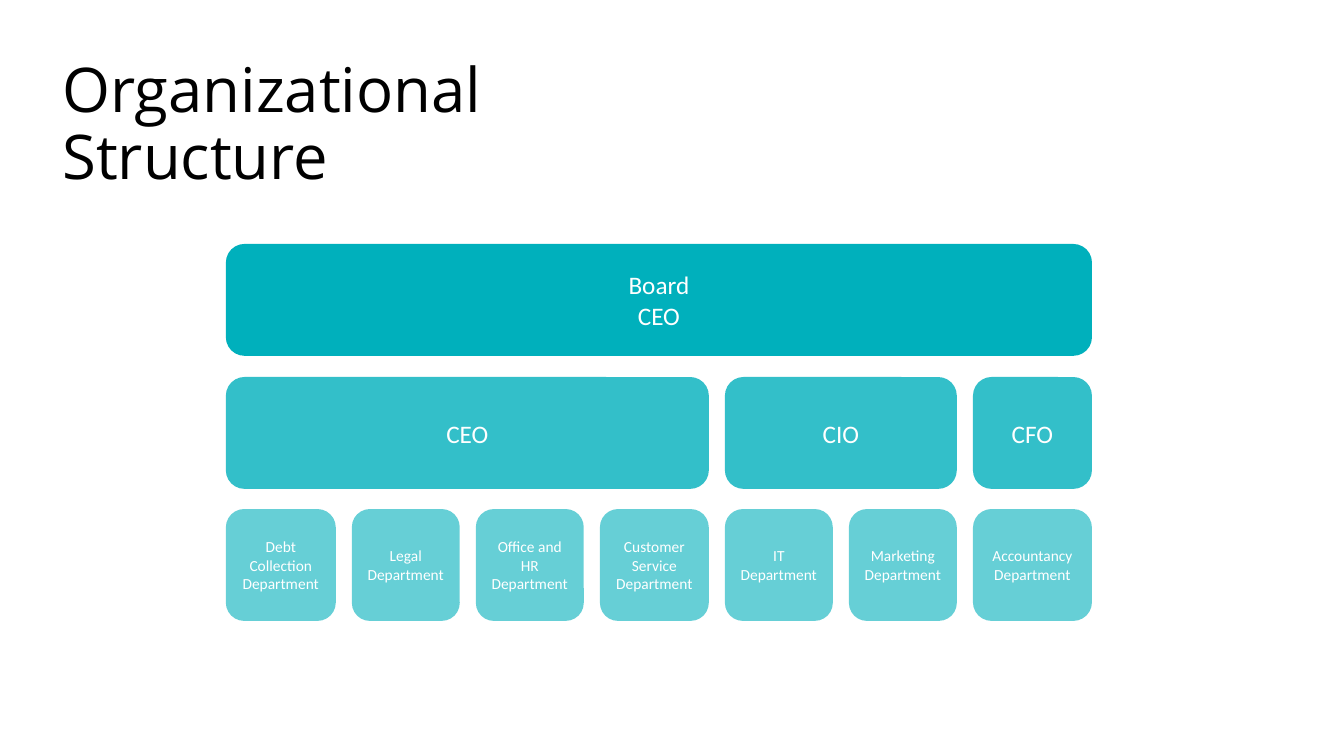
import pptx
import pptx.dml.color
import pptx.enum.shapes
import pptx.enum.text
import pptx.oxml
import pptx.oxml.ns
import pptx.util

Inches = pptx.util.Inches
TEAL = "00B0BC"
WHITE = "FFFFFF"
GAP = 0.16
HIGH = 1.11
LEFTS = [0, 1.25, 2.48, 3.71, 4.95, 6.18, 7.41]
ROWS = [
    (0, 100, 18, [("Board\nCEO", 7)]),
    (1.32, 80, 18, [("CEO", 4), ("CIO", 2), ("CFO", 1)]),
    (2.63, 60, 11, [
        ("Debt Collection Department", 1),
        ("Legal Department", 1),
        ("Office and HR Department", 1),
        ("Customer Service Department", 1),
        ("IT Department", 1),
        ("Marketing Department", 1),
        ("Accountancy Department", 1),
    ]),
]


def color(code):
    return pptx.dml.color.RGBColor.from_string(code)


def style(frame, face, size, code, align):
    for para in frame.paragraphs:
        para.alignment = align
        para.font.name = face
        para.font.size = pptx.util.Pt(size)
        para.font.color.rgb = color(code)


def fade(shape, rate):
    tint = shape.fill._xPr.find(".//" + pptx.oxml.ns.qn("a:srgbClr"))
    alpha = pptx.oxml.parse_xml(
        f'<a:alpha {pptx.oxml.ns.nsdecls("a")} val="{rate * 1000}"/>')
    tint.append(alpha)


def title(slide, left, top, width, height):
    box = slide.shapes.add_textbox(
        Inches(left), Inches(top), Inches(width), Inches(height))
    frame = box.text_frame
    frame.word_wrap = True
    frame.auto_size = pptx.enum.text.MSO_AUTO_SIZE.SHAPE_TO_FIT_TEXT
    frame.margin_right = Inches(0.2)
    frame.text = "Organizational Structure"
    frame.paragraphs[0].line_spacing = 0.9
    style(frame, "Open Sans", 44, "000000", pptx.enum.text.PP_ALIGN.LEFT)


def card(slide, left, top, width, text, size, rate):
    shape = slide.shapes.add_shape(
        pptx.enum.shapes.MSO_SHAPE.ROUNDED_RECTANGLE,
        Inches(left), Inches(top), Inches(width), Inches(HIGH))
    shape.shadow.inherit = False
    shape.fill.solid()
    shape.fill.fore_color.rgb = color(TEAL)
    if rate < 100:
        fade(shape, rate)
    shape.line.fill.background()
    frame = shape.text_frame
    frame.word_wrap = True
    frame.vertical_anchor = pptx.enum.text.MSO_ANCHOR.MIDDLE
    frame.text = text
    style(frame, "Calibri", size, WHITE, pptx.enum.text.PP_ALIGN.CENTER)


def chart(slide, left, top, width):
    edges = LEFTS + [width + GAP]
    for drop, rate, size, cards in ROWS:
        first = 0
        for text, span in cards:
            last = first + span
            wide = edges[last] - edges[first] - GAP
            card(slide, left + edges[first], top + drop, wide, text, size, rate)
            first = last


def main():
    deck = pptx.Presentation()
    deck.slide_width = Inches(13.33)
    deck.slide_height = Inches(7.5)
    slide = deck.slides.add_slide(deck.slide_layouts[6])
    title(slide, 0.52, 0.54, 7.11, 0.84)
    chart(slide, 2.24, 2.42, 8.59)
    deck.save("out.pptx")


if __name__ == "__main__":
    main()
